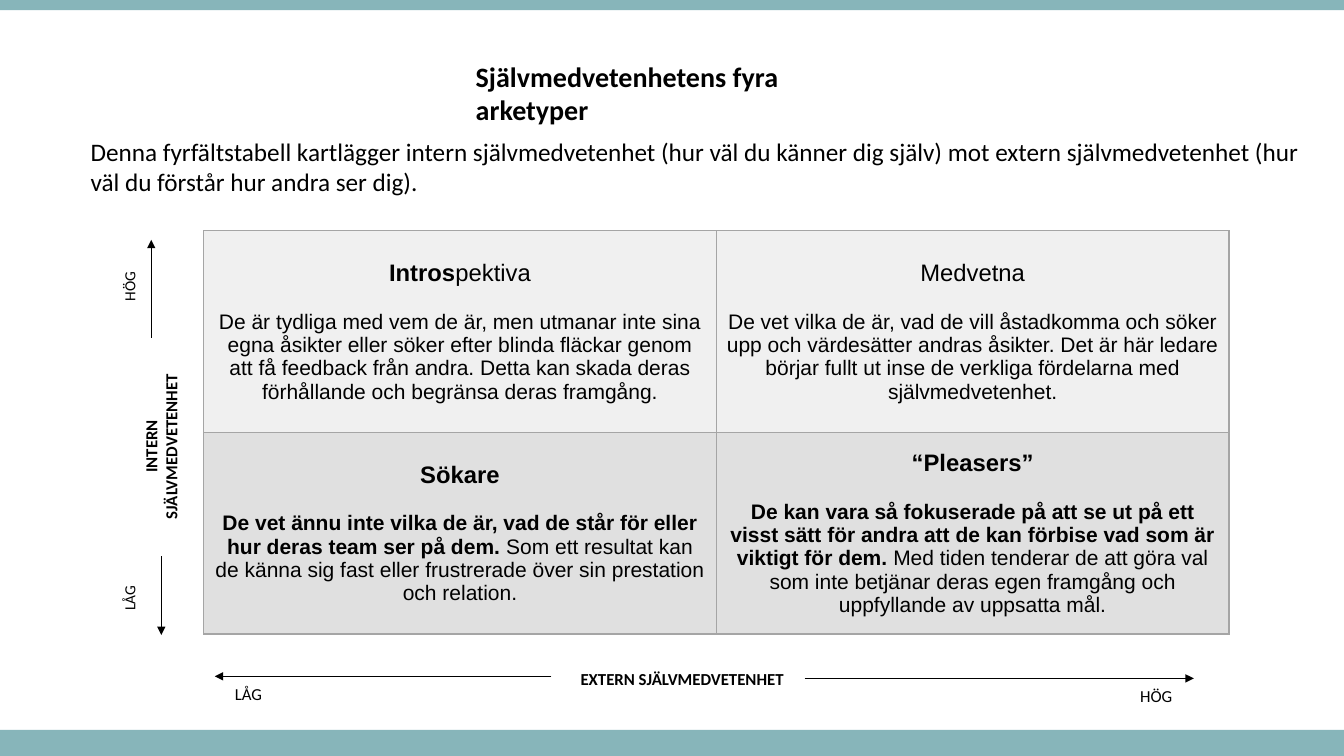
from dataclasses import dataclass

from lxml import etree
from pptx import Presentation
from pptx.dml.color import RGBColor
from pptx.enum import shapes, text
from pptx.oxml import ns
from pptx.util import Inches, Pt


@dataclass(frozen=True)
class Theme:
    band: str = "87B5BA"
    ink: str = "000000"
    edge: str = "A5A5A5"
    rows: tuple = ("F0F0F0", "E0E0E0")
    sans: str = "Calibri"
    cell: str = "Arial"
    title: int = 20
    lead: int = 18
    head: int = 17
    body: int = 15
    axis: int = 12
    mark: int = 11


THEME = Theme()
MID = text.PP_ALIGN.CENTER
LEFT = text.PP_ALIGN.LEFT

# Each cell: heading runs, then body runs, as (words, bold)
CELLS = [
    [
        ([("Intros", True), ("pektiva", False)],
         [("De är tydliga med vem de är, men utmanar inte sina egna åsikter "
           "eller söker efter blinda fläckar genom att få feedback från andra. "
           "Detta kan skada deras förhållande och begränsa deras framgång.",
           False)]),
        ([("Medvetna", False)],
         [("De vet vilka de är, vad de vill åstadkomma och söker upp och "
           "värdesätter andras åsikter. Det är här ledare börjar fullt ut inse "
           "de verkliga fördelarna med självmedvetenhet.", False)]),
    ],
    [
        ([("Sökare", True)],
         [("De vet ännu inte vilka de är, vad de står för eller hur deras team "
           "ser på dem. ", True),
          ("Som ett resultat kan de känna sig fast eller frustrerade över sin "
           "prestation och relation.", False)]),
        ([("“Pleasers”", True)],
         [("De kan vara så fokuserade på att se ut på ett visst sätt för andra "
           "att de kan förbise vad som är viktigt för dem. ", True),
          ("Med tiden tenderar de att göra val som inte betjänar deras egen "
           "framgång och uppfyllande av uppsatta mål.", False)]),
    ],
]


def apply(obj, form):
    for key, val in form.items():
        setattr(obj, key, val)


def paint(fill, hue):
    fill.solid()
    fill.fore_color.rgb = RGBColor.from_string(hue)


def write(para, runs, size, font, align):
    para.alignment = align
    for words, bold in runs:
        run = para.add_run()
        run.text = words
        apply(run.font, {"name": font, "size": Pt(size), "bold": bold})
        run.font.color.rgb = RGBColor.from_string(THEME.ink)


def add_band(slide, top, high):
    bar = slide.shapes.add_shape(
        shapes.MSO_SHAPE.RECTANGLE, 0, Inches(top), Inches(13.33), Inches(high))
    bar.shadow.inherit = False
    paint(bar.fill, THEME.band)
    bar.line.fill.background()


def add_label(slide, words, box, size, bold=False, align=LEFT, turn=0):
    label = slide.shapes.add_textbox(*map(Inches, box))
    label.rotation = turn
    label.text_frame.word_wrap = True
    write(label.text_frame.paragraphs[0], [(words, bold)], size,
          THEME.sans, align)


def add_arrow(slide, start, end):
    line = slide.shapes.add_connector(
        shapes.MSO_CONNECTOR.STRAIGHT, *map(Inches, start + end))
    line.line.width = Pt(0.75)
    line.line.color.rgb = RGBColor.from_string(THEME.ink)
    tip = etree.SubElement(line.line._get_or_add_ln(), ns.qn("a:tailEnd"))
    tip.set("type", "triangle")
    etree.SubElement(line._element.spPr, ns.qn("a:effectLst"))


def add_edges(cell):
    props = cell._tc.get_or_add_tcPr()
    for spot, side in enumerate(("lnL", "lnR", "lnT", "lnB")):
        edge = etree.Element(ns.qn("a:" + side), w=str(Pt(1)))
        fill = etree.SubElement(edge, ns.qn("a:solidFill"))
        etree.SubElement(fill, ns.qn("a:srgbClr"), val=THEME.edge)
        props.insert(spot, edge)


def fill_cell(cell, head, body, hue):
    apply(cell, {
        "vertical_anchor": text.MSO_ANCHOR.MIDDLE,
        "margin_left": Inches(0.1), "margin_right": Inches(0.1),
        "margin_top": Inches(0.05), "margin_bottom": Inches(0.05)})
    paint(cell.fill, hue)
    add_edges(cell)
    frame = cell.text_frame
    first = frame.paragraphs[0]
    write(first, head, THEME.head, THEME.cell, MID)
    first.space_after = Pt(17)
    write(frame.add_paragraph(), body, THEME.body, THEME.cell, MID)


def add_grid(slide):
    grid = slide.shapes.add_table(
        2, 2, Inches(2.02), Inches(2.29), Inches(10.17), Inches(4)).table
    apply(grid, {"first_row": False, "horz_banding": False})
    for row, hue, data in zip(grid.rows, THEME.rows, CELLS):
        row.height = Inches(2)
        for cell, (head, body) in zip(row.cells, data):
            fill_cell(cell, head, body, hue)


def main():
    deck = Presentation()
    apply(deck, {"slide_width": Inches(13.33), "slide_height": Inches(7.5)})
    slide = deck.slides.add_slide(deck.slide_layouts[6])

    # Bands at the foot and the top
    add_band(slide, 7.24, 0.26)
    add_band(slide, 0, 0.1)

    # Title and lead
    add_label(slide, "Självmedvetenhetens fyra arketyper",
              (4.62, 0.54, 4.29, 0.77), THEME.title, True)
    add_label(slide, "Denna fyrfältstabell kartlägger intern självmedvetenhet "
              "(hur väl du känner dig själv) mot extern självmedvetenhet "
              "(hur väl du förstår hur andra ser dig).",
              (0.8, 1.3, 12.22, 0.71), THEME.lead)

    # Four archetypes
    add_grid(slide)

    # Outer axis
    add_label(slide, "EXTERN SJÄLVMEDVETENHET", (5.66, 6.59, 2.5, 0.3),
              THEME.axis, True)
    add_label(slide, "LÅG", (2.23, 6.73, 0.75, 0.3), THEME.axis)
    add_label(slide, "HÖG", (11.21, 6.75, 0.63, 0.3), THEME.axis)
    add_arrow(slide, (5.47, 6.71), (2.13, 6.71))
    add_arrow(slide, (7.98, 6.73), (11.84, 6.73))

    # Inner axis
    add_label(slide, "INTERN SJÄLVMEDVETENHET", (0.51, 4.18, 2.17, 0.5),
              THEME.axis, True, MID, 270)
    add_label(slide, "LÅG", (0.91, 5.64, 0.75, 0.29), THEME.mark, turn=270)
    add_label(slide, "HÖG", (0.88, 2.54, 0.81, 0.29), THEME.mark, turn=270)
    add_arrow(slide, (1.5, 3.35), (1.5, 2.38))
    add_arrow(slide, (1.6, 5.52), (1.6, 6.3))

    deck.save("out.pptx")


if __name__ == "__main__":
    main()
